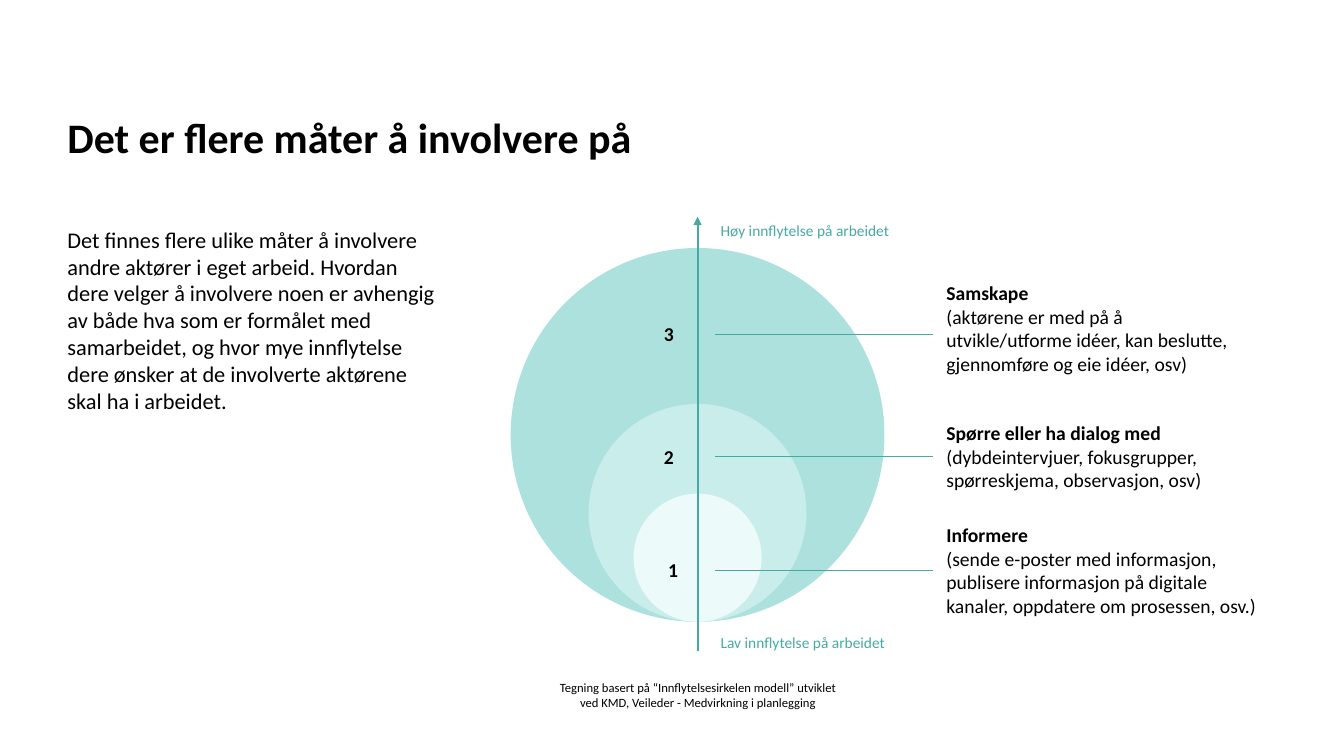
from lxml import etree
from pptx import Presentation
from pptx.dml.color import RGBColor
from pptx.enum.shapes import MSO_CONNECTOR as Link, MSO_SHAPE as Shape
from pptx.enum.text import MSO_ANCHOR as Anchor, MSO_AUTO_SIZE as Fit, PP_ALIGN as Align
from pptx.oxml.ns import qn
from pptx.util import Cm, Pt

COLORS = {"text": "000000", "accent": "47AAA2",
          "outer": "ADE1DD", "middle": "C8EDEA", "inner": "ECFBFA"}

# Level: number, number offset, centre height, label top, label size, heading, detail
LEVELS = [
    ("3", -1.1, 2.97, 1.37, (7.95, 2.9), "Samskape",
     "(aktørene er med på å utvikle/utforme idéer, kan beslutte, "
     "gjennomføre og eie idéer, osv)"),
    ("2", -1.1, 6.05, 4.9, (7.95, 2.31), "Spørre eller ha dialog med",
     "(dybdeintervjuer, fokusgrupper, spørreskjema, observasjon, osv)"),
    ("1", -0.99, 8.92, 7.47, (8.33, 2.9), "Informere",
     "(sende e-poster med informasjon, publisere informasjon på digitale "
     "kanaler, oppdatere om prosessen, osv.)"),
]


def rgb(name):
    return RGBColor.from_string(COLORS[name])


def write(frame, *lines, size=14, color="text", bold=False, bold_first=False,
          align=Align.LEFT, anchor=Anchor.TOP, inset=0.25, spacing=1.0, before=0):
    """Fill a text frame with one paragraph per line."""
    frame.word_wrap = True
    frame.auto_size = Fit.NONE
    frame.vertical_anchor = anchor
    frame.margin_left = frame.margin_right = Cm(0.25)
    frame.margin_top = frame.margin_bottom = Cm(inset)
    for index, line in enumerate(lines):
        paragraph = frame.add_paragraph() if index else frame.paragraphs[0]
        paragraph.alignment = align
        paragraph.line_spacing = spacing
        paragraph.space_before = Pt(before)
        run = paragraph.add_run()
        run.text = line
        run.font.name = "Calibri"
        run.font.size = Pt(size)
        run.font.bold = bold or (bold_first and index == 0)
        run.font.color.rgb = rgb(color)


def place(shape, left, top, width, height):
    shape.left, shape.top = Cm(left), Cm(top)
    shape.width, shape.height = Cm(width), Cm(height)


def add_label(slide, left, top, width, height, *lines, **style):
    label = slide.shapes.add_textbox(Cm(left), Cm(top), Cm(width), Cm(height))
    write(label.text_frame, *lines, **style)


def add_line(slide, x1, y1, x2, y2, width, arrow=False):
    line = slide.shapes.add_connector(Link.STRAIGHT, Cm(x1), Cm(y1), Cm(x2), Cm(y2))
    line.line.color.rgb = rgb("accent")
    line.line.width = Pt(width)
    if arrow:
        etree.SubElement(line.line._get_or_add_ln(), qn("a:tailEnd"), type="triangle")
    etree.SubElement(line._element.spPr, qn("a:effectLst"))


def add_heading(slide, left, top, width, height):
    title = slide.shapes.title
    place(title, left, top, width, height)
    write(title.text_frame, "Det er flere måter å involvere på", size=30, bold=True,
          anchor=Anchor.BOTTOM, inset=0.13, spacing=0.9)


def add_intro(slide, left, top, width, height):
    intro = slide.placeholders[1]
    place(intro, left, top, width, height)
    write(intro.text_frame,
          "Det finnes flere ulike måter å involvere andre aktører i eget arbeid. "
          "Hvordan dere velger å involvere noen er avhengig av både hva som er "
          "formålet med samarbeidet, og hvor mye innflytelse dere ønsker at de "
          "involverte aktørene skal ha i arbeidet.", size=16, inset=0.13, before=10)
    # Plain paragraph without bullet or hanging indent
    properties = intro.text_frame.paragraphs[0]._p.get_or_add_pPr()
    properties.set("marL", "0")
    properties.set("indent", "0")
    etree.SubElement(properties, qn("a:buNone"))


def add_influence_circles(slide, left, top, width, height):
    center, bottom = left + 4.71, top + 10.21

    # Nested circles resting on the same lowest point
    for color, diameter in (("outer", 9.42), ("middle", 5.49), ("inner", 3.23)):
        circle = slide.shapes.add_shape(
            Shape.OVAL, Cm(center - diameter / 2), Cm(bottom - diameter),
            Cm(diameter), Cm(diameter))
        circle.shadow.inherit = False
        circle.fill.solid()
        circle.fill.fore_color.rgb = rgb(color)
        circle.line.fill.background()

    # Influence axis with its two ends
    add_line(slide, center, top + height, center, top, 1.5, arrow=True)
    for end, offset in (("Høy", -0.15), ("Lav", 10.24)):
        add_label(slide, center + 0.33, top + offset, 7.95, 0.99,
                  f"{end} innflytelse på arbeidet", size=11, color="accent")

    # Levels: number, pointer and explanation
    for number, shift, middle, label_top, label_size, heading, detail in LEVELS:
        level = top + middle
        add_label(slide, center + shift, level - 0.56, 0.81, 1.12, number, bold=True)
        add_line(slide, center + 0.45, level, center + 5.94, level, 0.75)
        add_label(slide, left + width - 8.33, top + label_top, *label_size,
                  heading, detail, bold_first=True)


def add_credit(slide, left, top, width, height):
    add_label(slide, left, top, width, height,
              "Tegning basert på “Innflytelsesirkelen modell” utviklet ved KMD, "
              "Veileder - Medvirkning i planlegging", size=9, align=Align.CENTER)


def main():
    deck = Presentation()
    deck.slide_width, deck.slide_height = Cm(33.87), Cm(19.05)
    slide = deck.slides.add_slide(deck.slide_layouts[1])
    add_heading(slide, 1.45, 0.86, 20.12, 3.38)
    add_intro(slide, 1.45, 5.56, 9.86, 12.62)
    add_influence_circles(slide, 12.87, 5.46, 19.06, 10.95)
    add_credit(slide, 13.61, 16.89, 7.95, 1.27)
    deck.save("out.pptx")


if __name__ == "__main__":
    main()
